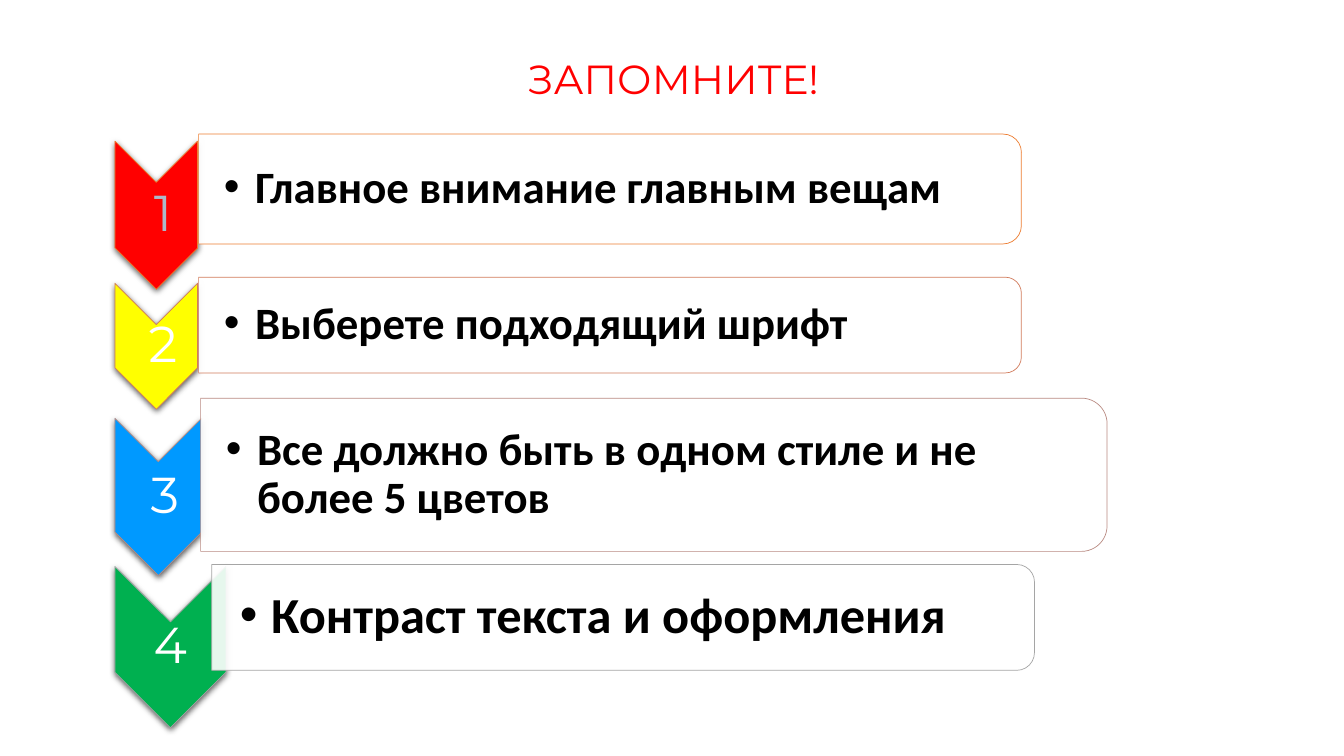
from lxml import etree
from pptx import Presentation
from pptx.dml.color import RGBColor
from pptx.enum.shapes import MSO_SHAPE
from pptx.enum.text import MSO_ANCHOR, PP_ALIGN
from pptx.oxml import parse_xml
from pptx.oxml.ns import nsdecls, qn
from pptx.util import Inches, Pt

CHEVRON = MSO_SHAPE.CHEVRON
PANEL = MSO_SHAPE.ROUND_2_SAME_RECTANGLE
MIDDLE = MSO_ANCHOR.MIDDLE
CENTER = PP_ALIGN.CENTER
LEFT = PP_ALIGN.LEFT

RED = RGBColor(0xFF, 0x00, 0x00)
YELLOW = RGBColor(0xFF, 0xFF, 0x00)
BLUE = RGBColor(0x00, 0x99, 0xFF)
GREEN = RGBColor(0x00, 0xB0, 0x50)
ORANGE = RGBColor(0xED, 0x7D, 0x31)
TERRACOTTA = RGBColor(0xD1, 0x7B, 0x5C)
DUSTY_ROSE = RGBColor(0xB9, 0x8A, 0x82)
GREY = RGBColor(0xA5, 0xA5, 0xA5)
PALE_BLUE = RGBColor(0xAD, 0xB9, 0xCA)
WHITE = RGBColor(0xFF, 0xFF, 0xFF)
BLACK = RGBColor(0x00, 0x00, 0x00)

CHEVRON_LEFT = 1.14
RULES = [
    (" 1", PALE_BLUE, RED, ORANGE, (1.4, 0.82, 1.47),
     "Главное внимание главным вещам", 32, 0.25, (1.97, 1.33, 8.16, 1.09)),
    (" 2", WHITE, YELLOW, TERRACOTTA, (2.81, 0.82, 1.25),
     "Выберете подходящий шрифт", 32, 0.25, (1.97, 2.75, 8.16, 0.95)),
    (" 3", WHITE, BLUE, DUSTY_ROSE, (4.15, 0.86, 1.56),
     "Все должно быть в одном стиле и не более 5 цветов", 32, 0.25,
     (1.99, 3.95, 8.99, 1.52)),
    ("4", WHITE, GREEN, GREY, (5.62, 1.1, 1.6),
     "Контраст текста и оформления", 36, 0.28, (2.1, 5.6, 8.16, 1.05)),
]


def format_text(tf, text, font, size, color, align, bold=False):
    tf.word_wrap = True
    tf.vertical_anchor = MIDDLE
    tf.text = text
    p = tf.paragraphs[0]
    p.alignment = align
    p.line_spacing = 0.9
    r = p.runs[0]
    r.font.name = font
    r.font.size = Pt(size)
    r.font.bold = bold
    r.font.color.rgb = color
    return p


def add_label(shapes, box, left_inset, inset, *style):
    tf = shapes.add_textbox(*map(Inches, box)).text_frame
    tf.margin_left = Inches(left_inset)
    tf.margin_right = tf.margin_top = tf.margin_bottom = Inches(inset)
    return format_text(tf, *style)


def add_turned_shape(shapes, kind, box, fill, line):
    x, y, w, h = box
    sp = shapes.add_shape(kind, Inches(x + (w - h) / 2), Inches(y + (h - w) / 2),
                          Inches(h), Inches(w))
    sp.rotation = 90
    sp.shadow.inherit = False
    sp.fill.solid()
    sp.fill.fore_color.rgb = fill
    sp.line.color.rgb = line
    sp.line.width = Pt(0.5)
    return sp


def add_chevron(shapes, box, number, number_color, fill, line):
    x, y, w, h = box
    sp = add_turned_shape(shapes, CHEVRON, box, fill, line)
    effects = sp._element.spPr.find(qn("a:effectLst"))
    effects.append(parse_xml(
        f'<a:outerShdw {nsdecls("a")} blurRad="{Pt(4.5)}" dist="{Pt(1.5)}" '
        'dir="5400000" rotWithShape="0"><a:srgbClr val="000000">'
        '<a:alpha val="63000"/></a:srgbClr></a:outerShdw>'))
    add_label(shapes, (x, y + w / 2, w, h - w), 0.03, 0.03,
              number, "Montserrat", 36, number_color, CENTER)


def add_panel(shapes, box, text, size, inset, line):
    x, y, w, h = box
    sp = add_turned_shape(shapes, PANEL, box, WHITE, line)
    color = sp._element.spPr.find(qn("a:solidFill"))[0]
    etree.SubElement(color, qn("a:alpha")).set("val", "90000")
    p = add_label(shapes, (x, y + 0.05, w - 0.05, h - 0.1), inset, 0.02,
                  text, "Calibri", size, BLACK, LEFT, True)
    p.level = 1
    pPr = p._p.get_or_add_pPr()
    pPr.set("marL", str(Inches(0.31)))
    pPr.set("indent", str(-Inches(0.31)))
    etree.SubElement(pPr, qn("a:buFont")).set("typeface", "Arial")
    etree.SubElement(pPr, qn("a:buChar")).set("char", "•")


def add_title(s, box):
    title = s.shapes.title
    title.left, title.top, title.width, title.height = map(Inches, box)
    format_text(title.text_frame, "ЗАПОМНИТЕ!", "Montserrat", 29, RED, CENTER)


def add_rules(s):
    shapes = s.shapes.add_group_shape().shapes
    for number, number_color, fill, line, chevron, text, size, inset, panel in RULES:
        add_chevron(shapes, (CHEVRON_LEFT, *chevron), number, number_color, fill, line)
        add_panel(shapes, panel, text, size, inset, line)


def main():
    prs = Presentation()
    prs.slide_width = Inches(13.33)
    prs.slide_height = Inches(7.5)
    s = prs.slides.add_slide(prs.slide_layouts[5])
    add_title(s, (2.18, 0.37, 9, 0.88))
    add_rules(s)
    prs.save("out.pptx")


if __name__ == "__main__":
    main()
